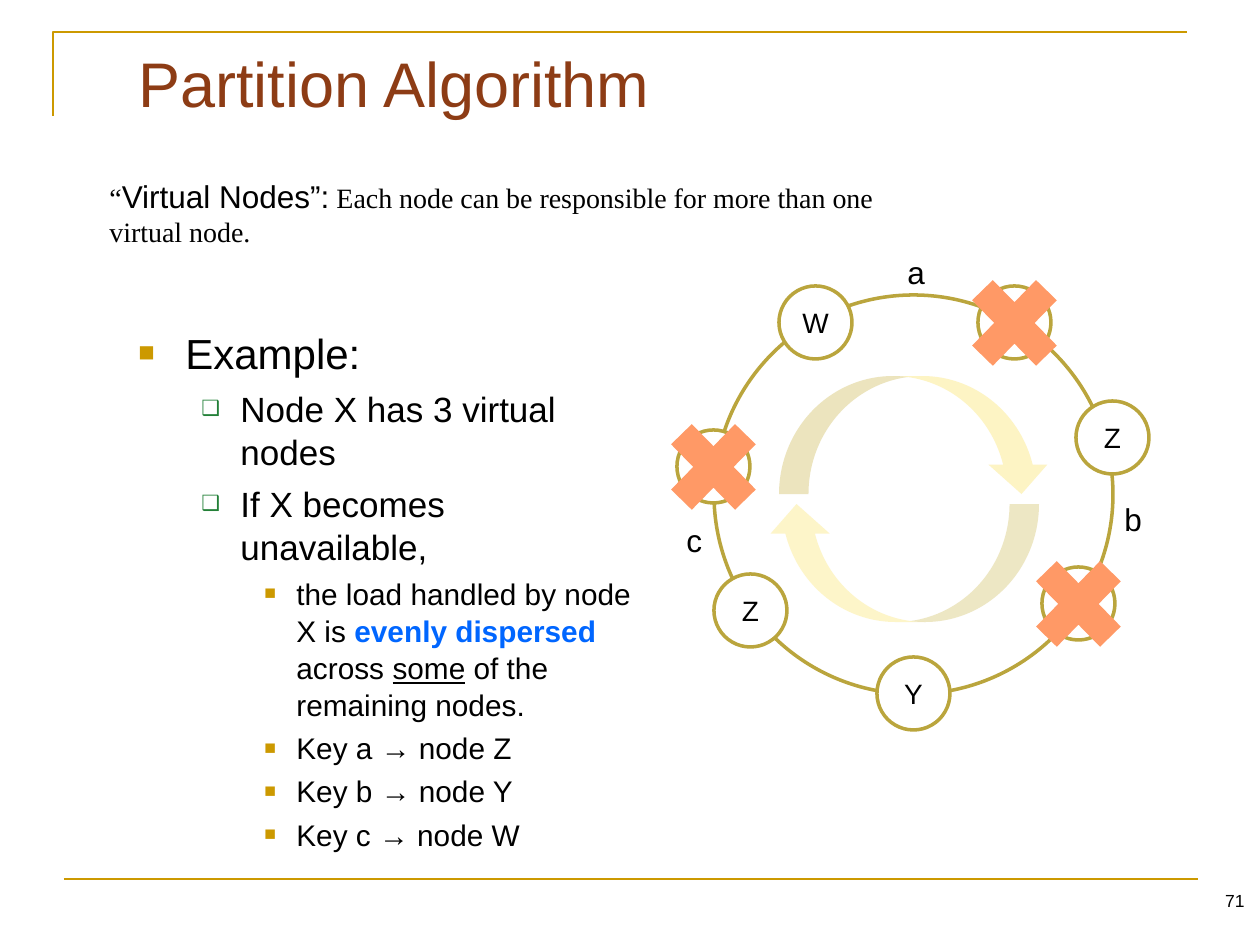
from lxml.etree import SubElement
from pptx import Presentation
from pptx.dml.color import RGBColor
from pptx.enum.shapes import MSO_CONNECTOR, MSO_SHAPE
from pptx.enum.text import MSO_ANCHOR, PP_ALIGN
from pptx.oxml.ns import qn
from pptx.util import Emu, Pt

SCALE = 914400 / 126  # EMU per px
COLORS = {
    "gold": "CC9900", "ring": "BAA53D", "title": "8D3C15", "black": "000000",
    "white": "FFFFFF", "green": "238038", "blue": "0066FF",
    "cross": "FF9966", "arrow": "FBDF53",
}


def write(para, text, size=18, color="black", font="Arial", bold=False, under=False):
    run = para.add_run()
    run.text = text
    run.font.size = Pt(size)
    run.font.name = font
    run.font.bold = bold
    run.font.underline = under
    run.font.color.rgb = RGBColor.from_string(COLORS[color])


def place(kind, *box, fill=None, line=None):
    """Add a preset shape, or a text box when kind is None."""
    box = [Emu(round(n * SCALE)) for n in box]
    if kind is None:
        item = slide.shapes.add_textbox(*box)
        item.text_frame.word_wrap = True
        return item
    item = slide.shapes.add_shape(kind, *box)
    item.shadow.inherit = False
    if fill:
        item.fill.solid()
        item.fill.fore_color.rgb = RGBColor.from_string(COLORS[fill])
    else:
        item.fill.background()
    if line:
        item.line.color.rgb = RGBColor.from_string(COLORS[line])
        item.line.width = Pt(2)
    else:
        item.line.fill.background()
    return item


deck = Presentation()
deck.slide_width = Emu(round(1260 * SCALE))
deck.slide_height = Emu(round(945 * SCALE))
slide = deck.slides.add_slide(deck.slide_layouts[6])

# Frame: corner at the top, rule at the foot
path = slide.shapes.build_freeform(53, 116, scale=SCALE)
path.add_line_segments([(53, 32), (1187, 32)], close=False)
corner = path.convert_to_shape()
corner.shadow.inherit = False
corner.fill.background()
ends = [Emu(round(n * SCALE)) for n in (64, 879, 1198, 879)]
rule = slide.shapes.add_connector(MSO_CONNECTOR.STRAIGHT, *ends)
SubElement(rule._element.spPr, qn("a:effectLst"))
for edge in (corner, rule):
    edge.line.color.rgb = RGBColor.from_string(COLORS["gold"])
    edge.line.width = Pt(1.5)

# Title
title = place(None, 126, 38, 1071, 158)
write(title.text_frame.paragraphs[0], "Partition Algorithm", size=36, color="title")

# Bulleted list: margin px, hang px, space pt, text pt, bullet, colour, percent
LEVELS = [
    (47, 47, 5, 24, "■", "gold", 65),
    (102, 39, 4.5, 20, "❑", "green", 60),
    (158, 32, 3.5, 17, "■", "gold", 65),
]
ITEMS = [
    (0, [("Example:", {})]),
    (1, [("Node X has 3 virtual nodes", {})]),
    (1, [("If X becomes unavailable,", {})]),
    (2, [("the load handled by node X is ", {}),
         ("evenly dispersed", {"color": "blue", "bold": True}),
         (" across ", {}), ("some", {"under": True}),
         (" of the remaining nodes.", {})]),
    (2, [("Key a → node Z", {})]),
    (2, [("Key b → node Y", {})]),
    (2, [("Key c → node W", {})]),
]
body = place(None, 126, 319, 525, 525).text_frame
for i, (level, parts) in enumerate(ITEMS):
    margin, hang, space, size, mark, tint, pct = LEVELS[level]
    para = body.add_paragraph() if i else body.paragraphs[0]
    para.level = level
    para.space_before = Pt(space)
    para.line_spacing = 1.04
    props = para._p.get_or_add_pPr()
    props.set("marL", str(round(margin * SCALE)))
    props.set("indent", str(round(-hang * SCALE)))
    SubElement(SubElement(props, qn("a:buClr")), qn("a:srgbClr"), val=COLORS[tint])
    SubElement(props, qn("a:buSzPct"), val=str(pct * 1000))
    SubElement(props, qn("a:buFont"), typeface="Arial")
    SubElement(props, qn("a:buChar"), char=mark)
    for text, style in parts:
        write(para, text, size=size, **style)

# Page number
page = place(None, 973, 876, 284, 50).text_frame
page.vertical_anchor = MSO_ANCHOR.MIDDLE
page.paragraphs[0].alignment = PP_ALIGN.RIGHT
write(page.paragraphs[0], "71", size=10)

# Ring with its nodes
place(MSO_SHAPE.OVAL, 714, 295, 399, 399, line="ring")
LOST = [(978, 286), (1042, 567), (677, 430)]
LIVE = [("Z", 714, 574), ("Y", 877, 657), ("Z", 1076, 401), ("W", 779, 286)]
for name, x, y in [("", *spot) for spot in LOST] + LIVE:
    node = place(MSO_SHAPE.OVAL, x, y, 73, 73, fill="white", line="ring")
    if name:
        frame = node.text_frame
        frame.word_wrap = False
        frame.vertical_anchor = MSO_ANCHOR.MIDDLE
        frame.paragraphs[0].alignment = PP_ALIGN.CENTER
        write(frame.paragraphs[0], name, size=16)

# Clockwise arrows
for x, y, turn, alpha in [(779, 376, 0, 34), (767, 504, 180, 31)]:
    arrow = place(MSO_SHAPE.CURVED_DOWN_ARROW, x, y, 272, 118, fill="arrow")
    arrow.rotation = turn
    tone = arrow._element.spPr.find(".//" + qn("a:srgbClr"))
    SubElement(tone, qn("a:alpha"), val=str(alpha * 1000))

# Key labels
for key, x, y in [("a", 895, 247), ("b", 1112, 494), ("c", 674, 515)]:
    write(place(None, x, y, 53, 50).text_frame.paragraphs[0], key)

# Crosses over the lost nodes
for x, y in LOST:
    place(MSO_SHAPE.MATH_MULTIPLY, x - 25, y - 26, 123, 126, fill="cross")

# Definition
para = place(None, 97, 171, 849, 84).text_frame.paragraphs[0]
write(para, "“", size=16, font="Times New Roman")
write(para, "Virtual Nodes”:")
write(para, " Each node can be responsible for more than one virtual node.",
      size=16, font="Times New Roman")

deck.save("out.pptx")
